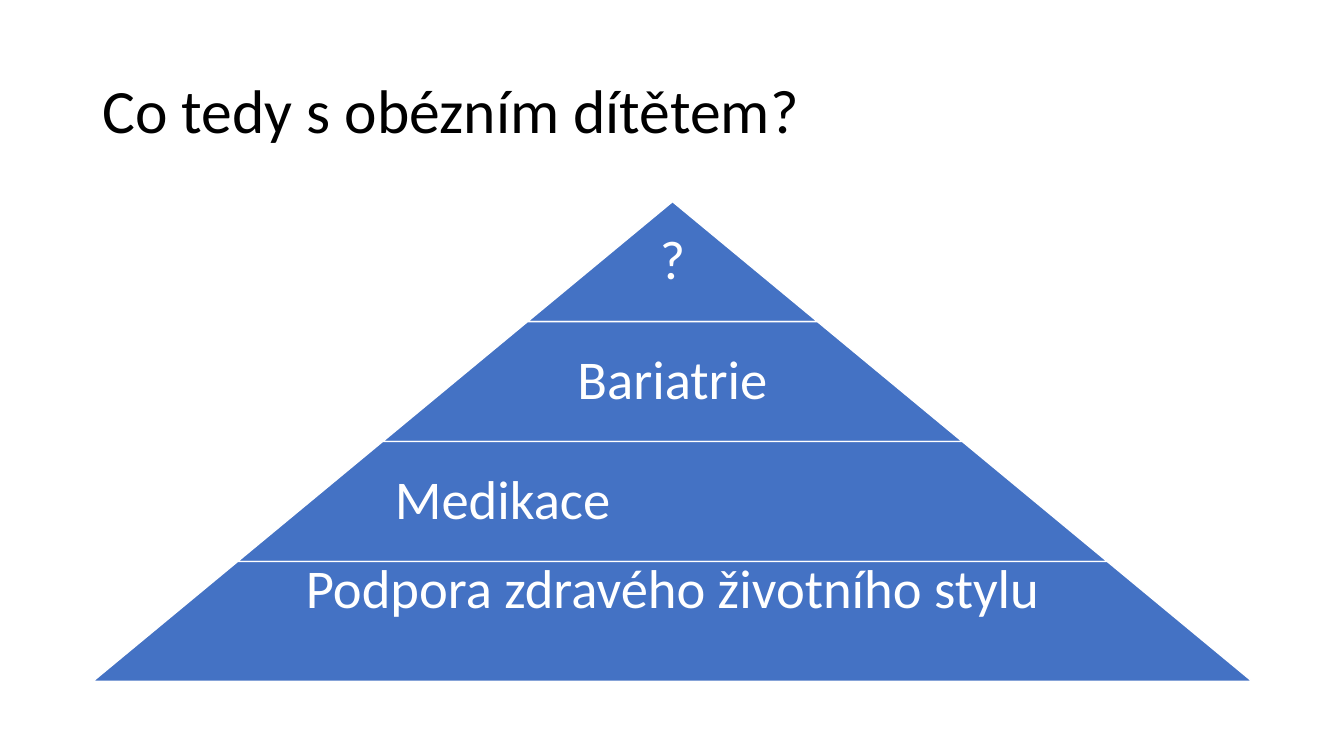
"""Build a slide with a four-level pyramid of care for an obese child."""
from dataclasses import dataclass

from pptx import Presentation
from pptx.dml.color import RGBColor
from pptx.enum.shapes import MSO_SHAPE
from pptx.enum.text import MSO_ANCHOR as Anchor, PP_ALIGN as Align
from pptx.util import Inches, Pt


@dataclass(frozen=True)
class Theme:
    font: str = "Calibri"
    title_color: RGBColor = RGBColor(0x00, 0x00, 0x00)
    band_color: RGBColor = RGBColor(0x44, 0x72, 0xC4)
    light: RGBColor = RGBColor(0xFF, 0xFF, 0xFF)
    title_size: Pt = Pt(44)
    band_size: Pt = Pt(39)
    outline: Pt = Pt(1)


THEME = Theme()
PYRAMID_LEFT, PYRAMID_TOP, PYRAMID_WIDTH = 0.92, 2, 11.5
BAND_HEIGHT = 1.19
LABEL_SHARE = 0.65
LEVELS = [
    ("?", Align.CENTER, Anchor.MIDDLE),
    ("Bariatrie", Align.CENTER, Anchor.MIDDLE),
    ("Medikace", Align.LEFT, Anchor.MIDDLE),
    ("Podpora zdravého životního stylu", Align.CENTER, Anchor.TOP),
]


def add_text(shapes, box, text, size, color, align=Align.LEFT, anchor=Anchor.MIDDLE):
    shape = shapes.add_textbox(*map(Inches, box))
    frame = shape.text_frame
    frame.word_wrap = True
    frame.vertical_anchor = anchor
    frame.text = text
    paragraph = frame.paragraphs[0]
    paragraph.alignment = align
    paragraph.line_spacing = 0.9
    font = paragraph.runs[0].font
    font.name, font.size = THEME.font, size
    font.color.rgb = color
    return frame


def add_band(shapes, box, slant):
    shape = shapes.add_shape(MSO_SHAPE.TRAPEZOID, *map(Inches, box))
    shape.adjustments[0] = slant
    shape.shadow.inherit = False
    shape.fill.solid()
    shape.fill.fore_color.rgb = THEME.band_color
    shape.line.color.rgb = THEME.light
    shape.line.width = THEME.outline


def add_label(shapes, box, text, align, anchor):
    frame = add_text(shapes, box, text, THEME.band_size, THEME.light, align, anchor)
    frame.margin_left = frame.margin_right = frame.margin_bottom = Inches(0.05)
    frame.margin_top = Inches(0 if anchor == Anchor.TOP else 0.05)


def add_pyramid(slide):
    shapes = slide.shapes.add_group_shape().shapes
    center = PYRAMID_LEFT + PYRAMID_WIDTH / 2
    step = PYRAMID_WIDTH / len(LEVELS)
    slant = step / 2 / BAND_HEIGHT
    for index, (text, align, anchor) in enumerate(LEVELS):
        top = PYRAMID_TOP + index * BAND_HEIGHT
        width = step * (index + 1)
        label_width = width * LABEL_SHARE if index else width
        add_band(shapes, (center - width / 2, top, width, BAND_HEIGHT), slant)
        label_box = (center - label_width / 2, top, label_width, BAND_HEIGHT)
        add_label(shapes, label_box, text, align, anchor)


def main():
    presentation = Presentation()
    presentation.slide_width = Inches(13.33)
    presentation.slide_height = Inches(7.5)
    slide = presentation.slides.add_slide(presentation.slide_layouts[6])
    add_text(slide.shapes, (0.92, 0.4, 11.5, 1.45), "Co tedy s obézním dítětem?",
             THEME.title_size, THEME.title_color)
    add_pyramid(slide)
    presentation.save("out.pptx")


if __name__ == "__main__":
    main()
